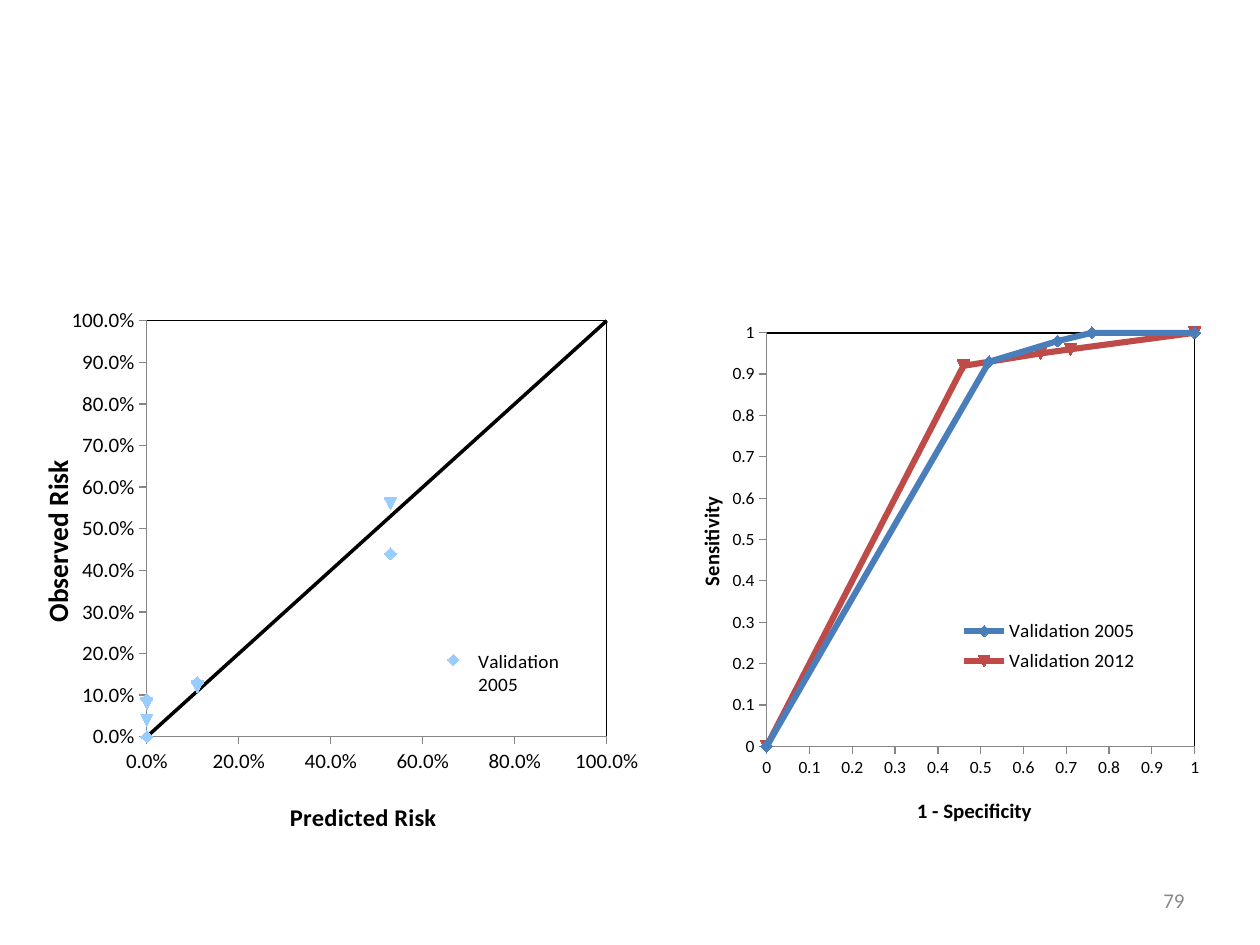
from dataclasses import dataclass
from typing import Optional

import lxml.etree
import pptx
import pptx.chart.data
import pptx.dml.color
import pptx.enum.chart
import pptx.enum.text
import pptx.oxml
import pptx.oxml.ns
import pptx.util

Cm = pptx.util.Cm
Pt = pptx.util.Pt
RGBColor = pptx.dml.color.RGBColor
qn = pptx.oxml.ns.qn
Marker = pptx.enum.chart.XL_MARKER_STYLE

BLACK = RGBColor(0, 0, 0)
GRAY = RGBColor(0x89, 0x89, 0x89)
AXIS_GRAY = RGBColor(0x86, 0x86, 0x86)
LIGHT_BLUE = RGBColor(0x99, 0xCC, 0xFF)
BLUE = RGBColor(0x4A, 0x7E, 0xBB)
RED = RGBColor(0xBE, 0x4B, 0x48)
FONT = "Calibri"


@dataclass
class Series:
    name: str
    points: list[tuple[float, float]]
    color: RGBColor
    line_width: Optional[float] = None
    has_marker: bool = True


@dataclass
class Axis:
    title: str
    title_size: float
    title_corner: tuple[float, float]
    label_size: float
    major_unit: float
    number_format: str


@dataclass
class ScatterChart:
    kind: pptx.enum.chart.XL_CHART_TYPE
    box: tuple[float, float, float, float]
    plot_box: tuple[float, float, float, float]
    legend_box: tuple[float, float, float, float]
    hidden_entries: list[int]
    x_axis: Axis
    y_axis: Axis
    series: list[Series]


CALIBRATION = ScatterChart(
    kind=pptx.enum.chart.XL_CHART_TYPE.XY_SCATTER,
    box=(0.42, 5.72, 12.7, 11.22),
    plot_box=(0.2, 0.068, 0.73, 0.763),
    legend_box=(0.64, 0.66, 0.23, 0.11),
    hidden_entries=[1, 2],
    x_axis=Axis("Predicted Risk", 14, (0.42, 0.94), 12, 0.2, "0.0%"),
    y_axis=Axis("Observed Risk", 16, (0.02, 0.32), 12, 0.1, "0.0%"),
    series=[
        Series("Validation 2005", [(0.53, 0.44), (0.11, 0.13), (0, 0.09), (0, 0)], LIGHT_BLUE),
        Series("Validation 2012", [(0.53, 0.56), (0.11, 0.12), (0, 0.04), (0, 0.08)], LIGHT_BLUE),
        Series("Series 3", [(0, 0), (1, 1)], BLACK, 2, has_marker=False),
    ],
)
ROC = ScatterChart(
    kind=pptx.enum.chart.XL_CHART_TYPE.XY_SCATTER_LINES,
    box=(13.76, 6.14, 10.8, 10.58),
    plot_box=(0.157, 0.055, 0.799, 0.805),
    legend_box=(0.51, 0.6, 0.35, 0.13),
    hidden_entries=[],
    x_axis=Axis("1 - Specificity", 12, (0.43, 0.95), 10, 0.1, "General"),
    y_axis=Axis("Sensitivity", 12, (0.02, 0.37), 10, 0.1, "General"),
    series=[
        Series("Validation 2005", [(0, 0), (0.52, 0.93), (0.68, 0.98), (0.76, 1), (1, 1)], BLUE, 3.5),
        Series("Validation 2012", [(0, 0), (0.46, 0.92), (0.64, 0.95), (0.71, 0.96), (1, 1)], RED, 3.5),
    ],
)


def make_layout(inner: bool = False, **fractions: float) -> lxml.etree._Element:
    """Return a c:layout placed by fractions of the chart: x, y and optionally w, h."""
    target = '<c:layoutTarget val="inner"/>' if inner else ""
    modes = "".join(f'<c:{key}Mode val="edge"/>' for key in ("x", "y"))
    values = "".join(f'<c:{key} val="{value}"/>' for key, value in fractions.items())
    return pptx.oxml.parse_xml(
        f'<c:layout {pptx.oxml.ns.nsdecls("c")}><c:manualLayout>'
        f"{target}{modes}{values}</c:manualLayout></c:layout>"
    )


def place(parent: lxml.etree._Element, index: int, layout: lxml.etree._Element) -> None:
    """Replace the layout of a chart part, inserting it at the given child index."""
    for old in parent.findall(qn("c:layout")):
        parent.remove(old)
    parent.insert(index, layout)


def format_axis(axis: pptx.chart.axis.ValueAxis, definition: Axis) -> None:
    axis.minimum_scale, axis.maximum_scale = 0, 1
    axis.major_unit = definition.major_unit
    axis.has_major_gridlines = False
    axis.major_tick_mark = pptx.enum.chart.XL_TICK_MARK.OUTSIDE
    axis.minor_tick_mark = pptx.enum.chart.XL_TICK_MARK.NONE
    axis.tick_labels.number_format = definition.number_format
    axis.tick_labels.number_format_is_linked = False
    axis.tick_labels.font.size = Pt(definition.label_size)
    axis.format.line.color.rgb = AXIS_GRAY
    axis.format.line.width = Pt(0.75)
    paragraph = axis.axis_title.text_frame.paragraphs[0]
    paragraph.text = definition.title
    font = paragraph.runs[0].font
    font.size, font.bold, font.name = Pt(definition.title_size), True, FONT
    font.color.rgb = BLACK
    x, y = definition.title_corner
    place(axis.axis_title._element, 1, make_layout(x=x, y=y))


def format_series(series: pptx.chart.series.XySeries, definition: Series) -> None:
    line = series.format.line
    if definition.line_width:
        line.color.rgb = definition.color
        line.width = Pt(definition.line_width)
    else:
        line.fill.background()
    if definition.has_marker:
        series.marker.size = 7
        series.marker.format.fill.solid()
        series.marker.format.fill.fore_color.rgb = definition.color
        series.marker.format.line.fill.background()
    else:
        series.marker.style = Marker.NONE
    for smooth in series._element.findall(qn("c:smooth")):
        smooth.set("val", "0")


def format_legend(chart: pptx.chart.chart.Chart, definition: ScatterChart) -> None:
    chart.has_legend = True
    legend = chart.legend
    legend.position = pptx.enum.chart.XL_LEGEND_POSITION.RIGHT
    legend.include_in_layout = False
    legend.font.size, legend.font.name = Pt(11), FONT
    for offset, index in enumerate(definition.hidden_entries):
        entry = pptx.oxml.parse_xml(
            f'<c:legendEntry {pptx.oxml.ns.nsdecls("c")}><c:idx val="{index}"/>'
            '<c:delete val="1"/></c:legendEntry>'
        )
        legend._element.insert(1 + offset, entry)
    x, y, w, h = definition.legend_box
    place(legend._element, 1 + len(definition.hidden_entries), make_layout(x=x, y=y, w=w, h=h))


def add_scatter_chart(slide: pptx.slide.Slide, definition: ScatterChart) -> None:
    data = pptx.chart.data.XyChartData()
    for item in definition.series:
        series = data.add_series(item.name)
        for x, y in item.points:
            series.add_data_point(x, y)
    box = [Cm(length) for length in definition.box]
    chart = slide.shapes.add_chart(definition.kind, *box, data).chart
    chart.has_title = False
    chart.font.size, chart.font.name = Pt(10), FONT
    chart.font.color.rgb = BLACK
    chart.plots[0].vary_by_categories = False
    format_axis(chart.category_axis, definition.x_axis)
    format_axis(chart.value_axis, definition.y_axis)
    for series, item in zip(chart.plots[0].series, definition.series):
        format_series(series, item)
    format_legend(chart, definition)

    plot_area = chart._chartSpace.chart.plotArea
    x, y, w, h = definition.plot_box
    place(plot_area, 0, make_layout(inner=True, x=x, y=y, w=w, h=h))
    plot_area.append(pptx.oxml.parse_xml(
        f'<c:spPr {pptx.oxml.ns.nsdecls("c", "a")}><a:noFill/><a:ln w="{Pt(0.75)}">'
        f'<a:solidFill><a:srgbClr val="{BLACK}"/></a:solidFill></a:ln></c:spPr>'
    ))


def add_slide_number(slide: pptx.slide.Slide, text: str) -> None:
    shape = slide.shapes.add_textbox(Cm(18.2), Cm(17.65), Cm(5.93), Cm(1.01))
    text_frame = shape.text_frame
    text_frame.word_wrap = True
    text_frame.vertical_anchor = pptx.enum.text.MSO_ANCHOR.MIDDLE
    text_frame.text = text
    paragraph = text_frame.paragraphs[0]
    paragraph.alignment = pptx.enum.text.PP_ALIGN.RIGHT
    font = paragraph.runs[0].font
    font.size, font.name = Pt(12), FONT
    font.color.rgb = GRAY


def main() -> None:
    presentation = pptx.Presentation()
    presentation.slide_width, presentation.slide_height = Cm(25.4), Cm(19.05)
    slide = presentation.slides.add_slide(presentation.slide_layouts[6])
    add_slide_number(slide, "79")
    for definition in (CALIBRATION, ROC):
        add_scatter_chart(slide, definition)
    presentation.save("out.pptx")


if __name__ == "__main__":
    main()
